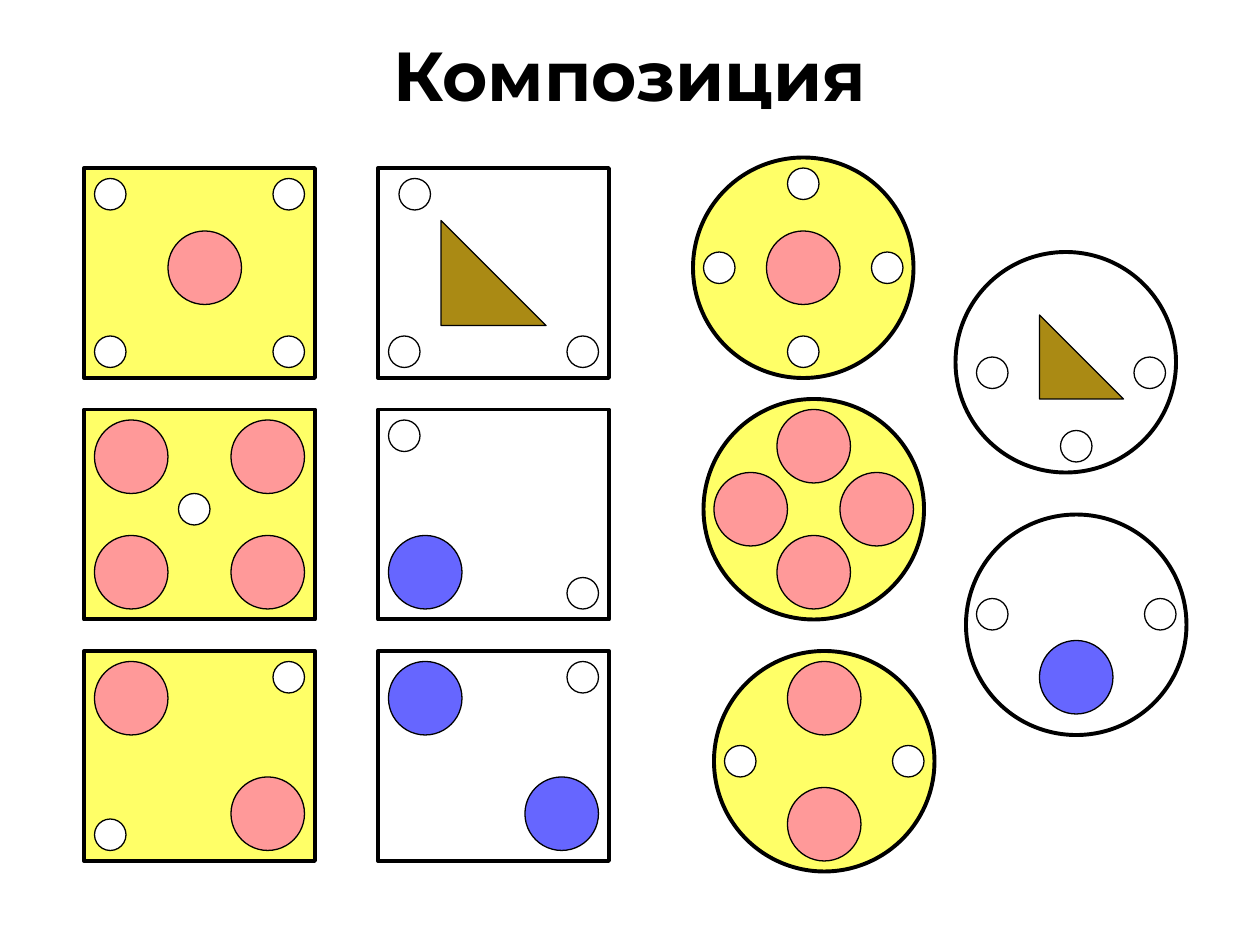
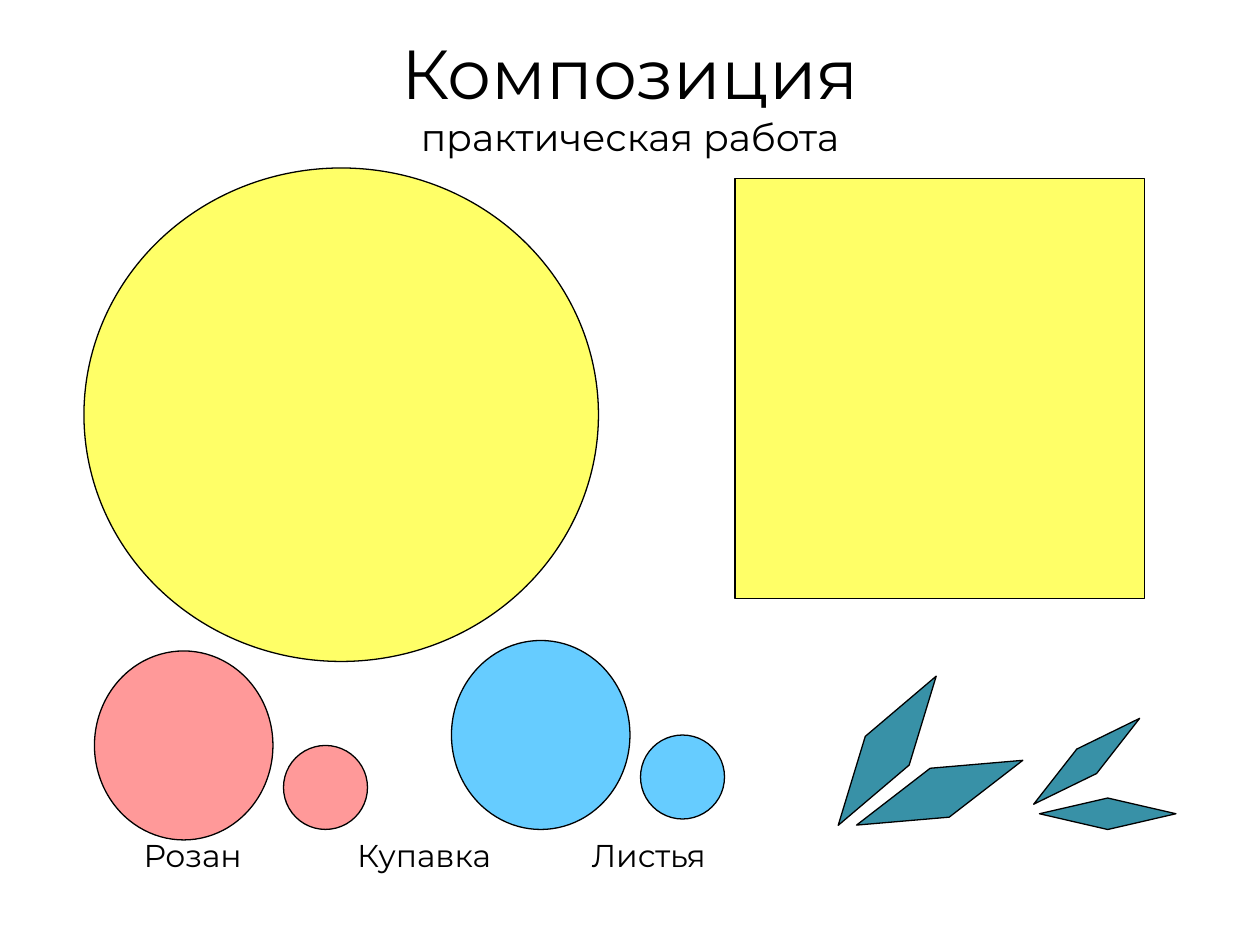
"""Build two slides about ornament composition: sample layouts and a practical task."""
from dataclasses import dataclass

import pptx
import pptx.dml.color
import pptx.enum.shapes
import pptx.enum.text
import pptx.oxml
import pptx.oxml.ns
import pptx.util

Pt = pptx.util.Pt
MSO = pptx.enum.shapes.MSO_SHAPE
ALIGN = pptx.enum.text.PP_ALIGN
ANCHOR = pptx.enum.text.MSO_ANCHOR

FONT = "Montserrat"
COLORS = {
    "ink": "000000",
    "white": "FFFFFF",
    "yellow": "FFFF67",
    "rose": "FF9999",
    "violet": "6666FF",
    "sky": "66CCFF",
    "ochre": "AA8A14",
    "leaf": "3891A7",
}
TITLE_SIZE = 39.6
SUBTITLE_SIZE = 21.6
LABEL_SIZE = 18
THIN = 0.75
THICK = 2.25


@dataclass(frozen=True)
class Kind:
    preset: MSO
    width: float
    height: float
    color: str
    line: float = THIN


@dataclass(frozen=True)
class Piece:
    kind: Kind
    x: float
    y: float
    rotation: float = 0


@dataclass(frozen=True)
class Panel:
    base: Piece
    pieces: tuple[Piece, ...]


def rgb(color: str) -> pptx.dml.color.RGBColor:
    return pptx.dml.color.RGBColor.from_string(COLORS[color])


def circle(size: float, color: str, line: float = THIN) -> Kind:
    return Kind(MSO.OVAL, size, size, color, line)


def triangle(size: float) -> Kind:
    return Kind(MSO.RIGHT_TRIANGLE, size, size, "ochre")


def box(color: str) -> Kind:
    return Kind(MSO.RECTANGLE, 132, 120, color, THICK)


def many(kind: Kind, *spots: tuple[float, float]) -> tuple[Piece, ...]:
    return tuple(Piece(kind, x, y) for x, y in spots)


BUD = circle(18, "white")
ROSE = circle(42, "rose")
VIOLET = circle(42, "violet")
YELLOW_BOX, WHITE_BOX = box("yellow"), box("white")
YELLOW_DISC, WHITE_DISC = (circle(126, c, THICK) for c in ("yellow", "white"))

COLUMNS = (48, 216)
ROWS = (96, 234, 372)
BUD_X, BUD_Y = (6, 108), (6, 96)
BIG_X, BIG_Y = (6, 84), (6, 72)
BUD_CORNERS = [(x, y) for y in BUD_Y for x in BUD_X]
BIG_CORNERS = [(x, y) for y in BIG_Y for x in BIG_X]
BUD_TL, BUD_TR, BUD_BL, BUD_BR = BUD_CORNERS
BIG_TL, BIG_TR, BIG_BL, BIG_BR = BIG_CORNERS
BUD_SIDES = [(6, 54), (102, 54)]
BUD_POLES = [(54, 6), (54, 102)]
BIG_SIDES = [(6, 42), (78, 42)]
BIG_POLES = [(42, 6), (42, 78)]

BOX_CONTENTS = (
    (
        many(ROSE, (48, 36)) + many(BUD, *BUD_CORNERS),
        many(ROSE, *BIG_CORNERS) + many(BUD, (54, 48)),
        many(ROSE, BIG_TL, BIG_BR) + many(BUD, BUD_TR, BUD_BL),
    ),
    (
        many(BUD, (12, 6), BUD_BL, BUD_BR) + many(triangle(60), (36, 30)),
        many(VIOLET, BIG_BL) + many(BUD, BUD_TL, BUD_BR),
        many(VIOLET, BIG_TL, BIG_BR) + many(BUD, BUD_TR),
    ),
)
BOX_PANELS = tuple(
    Panel(Piece(kind, x, y), pieces)
    for kind, x, column in zip((YELLOW_BOX, WHITE_BOX), COLUMNS, BOX_CONTENTS)
    for y, pieces in zip(ROWS, column)
)
DISC_PANELS = (
    Panel(Piece(YELLOW_DISC, 396, 90),
          many(ROSE, (42, 42)) + many(BUD, *BUD_SIDES, *BUD_POLES)),
    Panel(Piece(YELLOW_DISC, 402, 228), many(ROSE, *BIG_SIDES, *BIG_POLES)),
    Panel(Piece(YELLOW_DISC, 408, 372), many(ROSE, *BIG_POLES) + many(BUD, *BUD_SIDES)),
    Panel(Piece(WHITE_DISC, 546, 144),
          many(triangle(48), (48, 36)) + many(BUD, (12, 60), (102, 60), (60, 102))),
    Panel(Piece(WHITE_DISC, 552, 294),
          many(VIOLET, (42, 72)) + many(BUD, (6, 48), (102, 48))),
)

BIG_LEAF = Kind(MSO.FLOWCHART_DECISION, 102, 30, "leaf")
SMALL_LEAF = Kind(MSO.FLOWCHART_DECISION, 78, 18, "leaf")
PRACTICE_PIECES = (
    Piece(Kind(MSO.RECTANGLE, 234, 240, "yellow"), 420, 102),
    Piece(Kind(MSO.OVAL, 294, 282, "yellow"), 48, 96),
    Piece(BIG_LEAF, 456, 414, 303.3),
    Piece(BIG_LEAF, 486, 438, 338.7),
    Piece(SMALL_LEAF, 582, 426, 321),
    Piece(SMALL_LEAF, 594, 456),
    Piece(Kind(MSO.OVAL, 102, 108, "rose"), 54, 372),
    Piece(circle(48, "rose"), 162, 426),
    Piece(Kind(MSO.OVAL, 102, 108, "sky"), 258, 366),
    Piece(circle(48, "sky"), 366, 420),
)
LABELS = ("Розан", "Купавка", "Листья")
LABEL_TABS = (122, 256)


def draw_piece(s: pptx.slide.Slide, piece: Piece, dx: float = 0, dy: float = 0) -> None:
    kind = piece.kind
    sp = s.shapes.add_shape(kind.preset, Pt(piece.x + dx), Pt(piece.y + dy),
                            Pt(kind.width), Pt(kind.height))
    sp.shadow.inherit = False
    sp.rotation = piece.rotation
    sp.fill.solid()
    sp.fill.fore_color.rgb = rgb(kind.color)
    sp.line.color.rgb = rgb("ink")
    sp.line.width = Pt(kind.line)


def draw_panel(s: pptx.slide.Slide, panel: Panel) -> None:
    draw_piece(s, panel.base)
    for piece in panel.pieces:
        draw_piece(s, piece, panel.base.x, panel.base.y)


def style(p: pptx.text.text._Paragraph, size: float, bold: bool = False) -> None:
    for r in p.runs:
        r.font.name = FONT
        r.font.size = Pt(size)
        r.font.bold = bold
        r.font.color.rgb = rgb("ink")


def add_title(s: pptx.slide.Slide, text: str, y: float, height: float,
              bold: bool = False, subtitle: str = "") -> None:
    tf = s.shapes.add_textbox(Pt(54), Pt(y), Pt(612), Pt(height)).text_frame
    tf.word_wrap = True
    tf.vertical_anchor = ANCHOR.MIDDLE
    tf.text = text
    style(tf.paragraphs[0], TITLE_SIZE, bold)
    if subtitle:
        p = tf.add_paragraph()
        p.text = subtitle
        style(p, SUBTITLE_SIZE)
    for p in tf.paragraphs:
        p.alignment = ALIGN.CENTER


def add_labels(s: pptx.slide.Slide) -> None:
    tf = s.shapes.add_textbox(Pt(24), Pt(474), Pt(669), Pt(36)).text_frame
    tf.word_wrap = True
    tf.margin_left = Pt(58)
    tf.text = "\t".join(LABELS)
    p = tf.paragraphs[0]
    tabs = pptx.oxml.parse_xml(f"<a:tabLst {pptx.oxml.ns.nsdecls('a')}/>")
    for position in LABEL_TABS:
        tab = tabs.makeelement(pptx.oxml.ns.qn("a:tab"),
                               {"pos": str(Pt(position)), "algn": "l"})
        tabs.append(tab)
    p._p.get_or_add_pPr().append(tabs)
    style(p, LABEL_SIZE)


def main() -> None:
    prs = pptx.Presentation()
    prs.slide_width, prs.slide_height = Pt(720), Pt(540)
    blank = prs.slide_layouts[6]

    s = prs.slides.add_slide(blank)
    add_title(s, "Композиция", 18, 48, bold=True)
    for panel in BOX_PANELS + DISC_PANELS:
        draw_panel(s, panel)

    s = prs.slides.add_slide(blank)
    add_title(s, "Композиция", 24, 60, subtitle="практическая работа")
    for piece in PRACTICE_PIECES:
        draw_piece(s, piece)
    add_labels(s)

    prs.save("out.pptx")


if __name__ == "__main__":
    main()
